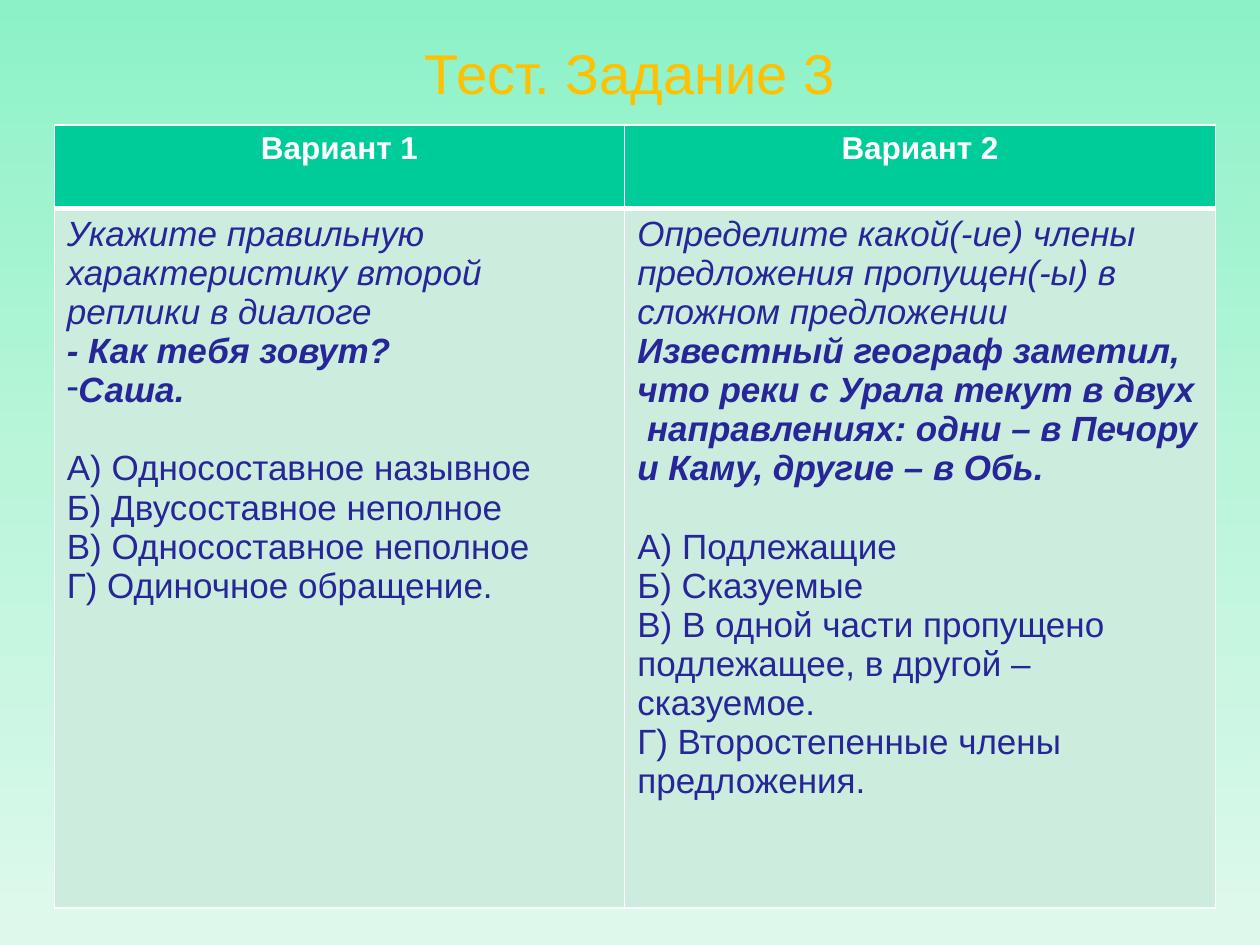
from copy import deepcopy

from pptx import Presentation
from pptx.dml.color import RGBColor
from pptx.enum.text import MSO_ANCHOR, PP_ALIGN
from pptx.oxml import parse_xml
from pptx.oxml.ns import nsdecls, qn
from pptx.util import Pt

GOLD = RGBColor(0xFF, 0xC0, 0x00)
WHITE = RGBColor(0xFF, 0xFF, 0xFF)
NAVY = RGBColor(0x26, 0x26, 0x99)
GREEN = RGBColor(0x00, 0xCC, 0x99)
PALE_GREEN = RGBColor(0xCC, 0xEC, 0xDE)
BACKGROUND = [
    (0, RGBColor(0x8C, 0xF2, 0xC6)),
    (0.5, RGBColor(0xBA, 0xF5, 0xDA)),
    (1, RGBColor(0xDE, 0xF9, 0xEC)),
]

TITLE = "Тест. Задание 3"
VARIANTS = [
    {
        "name": "Вариант 1",
        "task": "Укажите правильную характеристику второй реплики в диалоге",
        "example": ["- Как тебя зовут?"],
        "reply": "Саша.",
        "answers": [
            "А) Односоставное назывное",
            "Б) Двусоставное неполное",
            "В) Односоставное неполное",
            "Г) Одиночное обращение.",
        ],
    },
    {
        "name": "Вариант 2",
        "task": "Определите какой(-ие) члены предложения пропущен(-ы) в сложном предложении",
        "example": [
            "Известный географ заметил, что реки с Урала текут в двух  направлениях: "
            "одни – в Печору и Каму, другие – в Обь."
        ],
        "reply": None,
        "answers": [
            "А) Подлежащие",
            "Б) Сказуемые",
            "В) В одной части пропущено подлежащее, в другой – сказуемое.",
            "Г) Второстепенные члены предложения.",
        ],
    },
]

TITLE_BOX = {"left": 36, "top": 21.6, "width": 648, "height": 38.9}
TABLE_LEFT, TABLE_TOP = 31, 71.3
COLUMN_WIDTHS = [326, 337.5]
ROW_HEIGHTS = [48, 399.6]
ANSWER_GAP = 22.3

TITLE_FONT = {"name": "Arial", "size": Pt(32), "bold": False}
HEADER_FONT = {"name": "Arial", "size": Pt(18), "bold": True}
BODY_FONT = {"name": "Arial", "size": Pt(20), "bold": False, "italic": False}
TASK_FONT = BODY_FONT | {"italic": True}
EXAMPLE_FONT = TASK_FONT | {"bold": True}


def write(paragraph, text, font_format, color):
    run = paragraph.add_run()
    run.text = text
    for key, value in font_format.items():
        setattr(run.font, key, value)
    run.font.color.rgb = color


def add_dash_bullet(paragraph):
    properties = paragraph._p.get_or_add_pPr()
    properties.set("marL", "0")
    properties.set("indent", "0")
    properties.append(parse_xml(
        f'<a:buClr {nsdecls("a")}><a:srgbClr val="{NAVY}"/></a:buClr>'))
    properties.append(parse_xml(f'<a:buChar {nsdecls("a")} char="-"/>'))


def style_cell(cell, fill_color, widths):
    """Borders go in before the fill, as the schema orders them."""
    properties = cell._tc.get_or_add_tcPr()
    for side in ("L", "R", "T", "B"):
        properties.append(parse_xml(
            f'<a:ln{side} {nsdecls("a")} w="{Pt(widths.get(side, 1))}">'
            f'<a:solidFill><a:srgbClr val="{WHITE}"/></a:solidFill></a:ln{side}>'))
    cell.fill.solid()
    cell.fill.fore_color.rgb = fill_color


def body_lines(variant):
    """Yield text, font, space before and whether a dash bullet leads."""
    yield variant["task"], TASK_FONT, 0, False
    for line in variant["example"]:
        yield line, EXAMPLE_FONT, 0, False
    if variant["reply"]:
        yield variant["reply"], EXAMPLE_FONT, 0, True
    for index, answer in enumerate(variant["answers"]):
        yield answer, BODY_FONT, 0 if index else ANSWER_GAP, False


def paint_background(slide):
    fill = slide.background.fill
    fill.gradient()
    fill.gradient_angle = 270
    stop_list = slide.element.find(".//" + qn("a:gsLst"))
    stop_list.append(deepcopy(stop_list[0]))
    for stop, (position, color) in zip(fill.gradient_stops, BACKGROUND):
        stop.position = position
        stop.color.rgb = color


def add_title(slide):
    title = slide.shapes.title
    for key, value in TITLE_BOX.items():
        setattr(title, key, Pt(value))
    title.text_frame.vertical_anchor = MSO_ANCHOR.MIDDLE
    heading = title.text_frame.paragraphs[0]
    heading.alignment = PP_ALIGN.CENTER
    write(heading, TITLE, TITLE_FONT, GOLD)


def add_variants(slide):
    table = slide.shapes.add_table(
        2, len(VARIANTS), Pt(TABLE_LEFT), Pt(TABLE_TOP),
        Pt(sum(COLUMN_WIDTHS)), Pt(sum(ROW_HEIGHTS))).table
    for row, height in zip(table.rows, ROW_HEIGHTS):
        row.height = Pt(height)
    for index, (variant, width) in enumerate(zip(VARIANTS, COLUMN_WIDTHS)):
        table.columns[index].width = Pt(width)
        header, body = table.cell(0, index), table.cell(1, index)
        style_cell(header, GREEN, {"B": 3})
        style_cell(body, PALE_GREEN, {"T": 3})

        name = header.text_frame.paragraphs[0]
        name.alignment = PP_ALIGN.CENTER
        write(name, variant["name"], HEADER_FONT, WHITE)

        for number, (text, font, gap, dashed) in enumerate(body_lines(variant)):
            frame = body.text_frame
            paragraph = frame.add_paragraph() if number else frame.paragraphs[0]
            if gap:
                paragraph.space_before = Pt(gap)
            if dashed:
                add_dash_bullet(paragraph)
            write(paragraph, text, font, NAVY)


def main():
    presentation = Presentation()
    presentation.slide_width, presentation.slide_height = Pt(720), Pt(540)
    slide = presentation.slides.add_slide(presentation.slide_layouts[5])
    paint_background(slide)
    add_title(slide)
    add_variants(slide)
    presentation.save("out.pptx")


if __name__ == "__main__":
    main()
